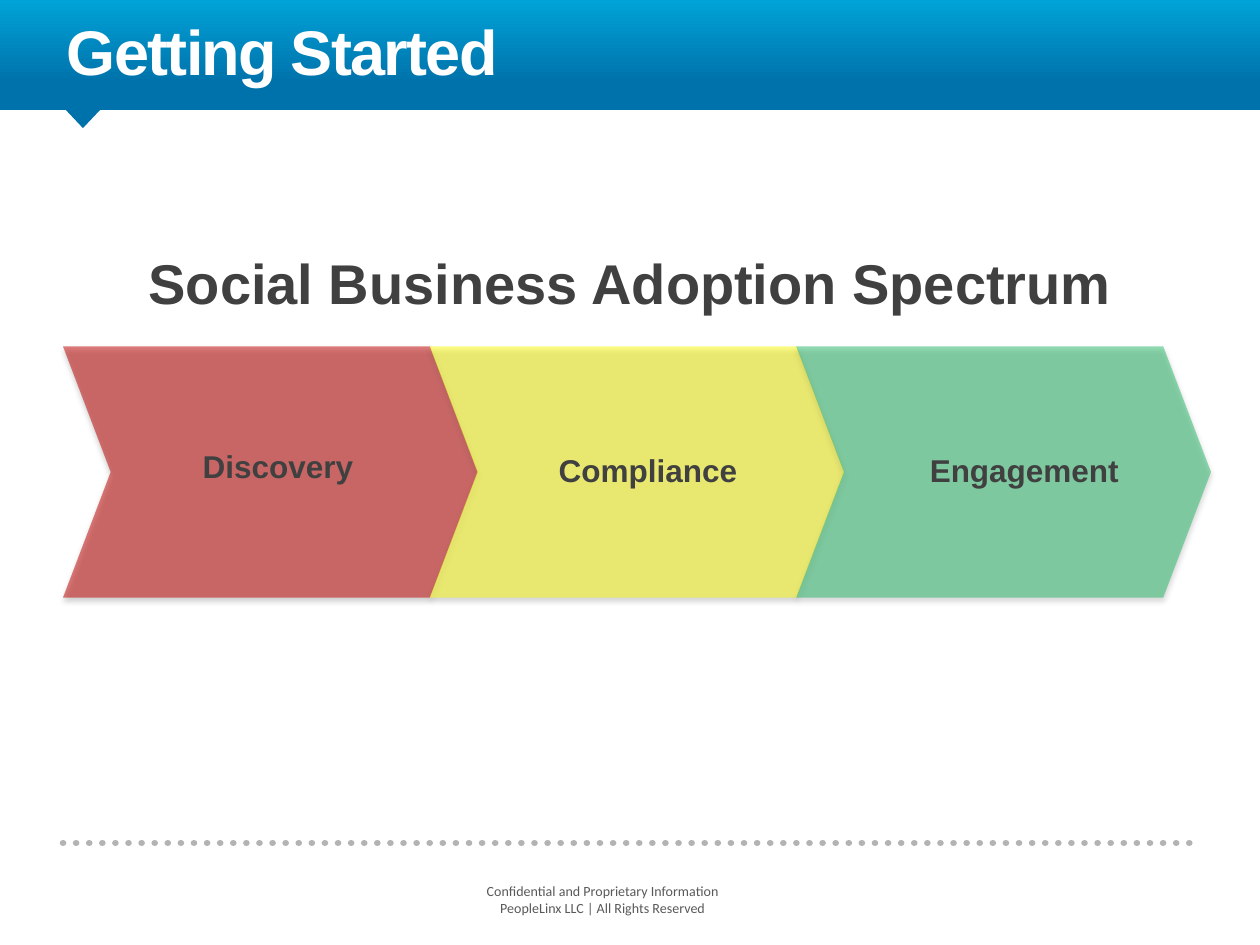
import pptx
import pptx.util
import pptx.dml.color
import pptx.enum.dml
import pptx.enum.shapes
import pptx.enum.text
import pptx.oxml
import pptx.oxml.ns

Pt = pptx.util.Pt
Shape = pptx.enum.shapes.MSO_SHAPE
Align = pptx.enum.text.PP_ALIGN
NAMESPACE = pptx.oxml.ns.nsdecls("a")


def color(value):
    return pptx.dml.color.RGBColor.from_string(value)


def add_effects(shape, content=""):
    effects = f"<a:effectLst {NAMESPACE}>{content}</a:effectLst>"
    shape._element.spPr.append(pptx.oxml.parse_xml(effects))


def add_shape(page, kind, left, top, width, height, fill):
    shape = page.shapes.add_shape(kind, Pt(left), Pt(top), Pt(width), Pt(height))
    shape.fill.solid()
    shape.fill.fore_color.rgb = color(fill)
    shape.line.fill.background()
    return shape


def add_banner(page):
    banner = add_shape(page, Shape.RECTANGLE, 0, 0, 720, 62.8, "0072AB")
    banner.shadow.inherit = False
    banner.fill.gradient()
    banner.fill.gradient_angle = 270
    stops = ((0, "00A3D7"), (0.75, "0072AB"))
    for stop, (position, value) in zip(banner.fill.gradient_stops, stops):
        stop.position = position
        stop.color.rgb = color(value)
    pointer = add_shape(page, Shape.ISOSCELES_TRIANGLE, 37.4, 62.6, 20, 10.6, "0072AB")
    pointer.shadow.inherit = False
    pointer.rotation = 180


def add_divider(page):
    divider = page.shapes.add_connector(
        pptx.enum.shapes.MSO_CONNECTOR.STRAIGHT, Pt(36), Pt(481.7), Pt(684), Pt(481.7))
    divider.line.color.rgb = color("B3B3B3")
    divider.line.width = Pt(3.75)
    divider.line.dash_style = pptx.enum.dml.MSO_LINE.ROUND_DOT
    divider.line._ln.set("cap", "rnd")
    add_effects(divider)


def add_chevron(page, left, fill, opacity):
    chevron = add_shape(page, Shape.CHEVRON, left, 198, 237, 143.5, fill)
    chevron.adjustments[0] = 0.19
    fill_color = chevron._element.spPr.find(".//" + pptx.oxml.ns.qn("a:srgbClr"))
    fill_color.append(pptx.oxml.parse_xml(f'<a:alpha {NAMESPACE} val="{opacity * 1000}"/>'))
    add_effects(
        chevron,
        f'<a:outerShdw blurRad="{Pt(3.1)}" dist="{Pt(1.8)}" dir="5400000" rotWithShape="0">'
        '<a:srgbClr val="000000"><a:alpha val="35000"/></a:srgbClr></a:outerShdw>')


def format_para(para, size, value, name="Arial", bold=True):
    para.font.size = Pt(size)
    para.font.name = name
    para.font.bold = bold
    para.font.color.rgb = color(value)


def add_text(page, lines, left, top, width, height, size,
             value="404040", name="Arial", bold=True, align=Align.LEFT):
    box = page.shapes.add_textbox(Pt(left), Pt(top), Pt(width), Pt(height))
    frame = box.text_frame
    frame.word_wrap = False
    frame.auto_size = pptx.enum.text.MSO_AUTO_SIZE.SHAPE_TO_FIT_TEXT
    frame.text = "\n".join(lines)
    for para in frame.paragraphs:
        para.alignment = align
        format_para(para, size, value, name, bold)


def set_title(page, text):
    title = page.shapes.title
    title.left, title.top, title.width, title.height = Pt(31), Pt(0), Pt(643.7), Pt(54)
    frame = title.text_frame
    frame.text = text
    frame.word_wrap = True
    frame.auto_size = pptx.enum.text.MSO_AUTO_SIZE.NONE
    frame.vertical_anchor = pptx.enum.text.MSO_ANCHOR.BOTTOM
    para = frame.paragraphs[0]
    para.alignment = Align.LEFT
    format_para(para, 36, "FFFFFF")
    para.runs[0]._r.get_or_add_rPr().set("spc", "-100")
    tree = page.shapes._spTree
    tree.remove(title._element)
    tree.append(title._element)


def main():
    deck = pptx.Presentation()
    deck.slide_width, deck.slide_height = Pt(720), Pt(540)
    page = deck.slides.add_slide(deck.slide_layouts[5])

    add_banner(page)
    add_divider(page)
    footer = ("Confidential and Proprietary Information",
              "PeopleLinx LLC | All Rights Reserved")
    add_text(page, footer, 270, 501, 149, 26.6, 8, "595959", "Calibri", False, Align.CENTER)

    stages = (
        ("Discovery", "C00000", 51, 108.8, 252, 103.7),
        ("Compliance", "FFFF00", 47, 312.2, 254, 117.4),
        ("Engagement", "00B050", 42, 524.2, 254, 123.8),
    )
    for index, (label, fill, opacity, left, top, width) in enumerate(stages):
        add_chevron(page, 36 + index * 209.5, fill, opacity)
    set_title(page, "Getting Started")
    add_text(page, ["Social Business Adoption Spectrum"], 77.8, 138.2, 579.6, 46, 32)
    for label, fill, opacity, left, top, width in stages:
        add_text(page, [label], left, top, width, 29, 18)

    deck.save("out.pptx")


if __name__ == "__main__":
    main()
